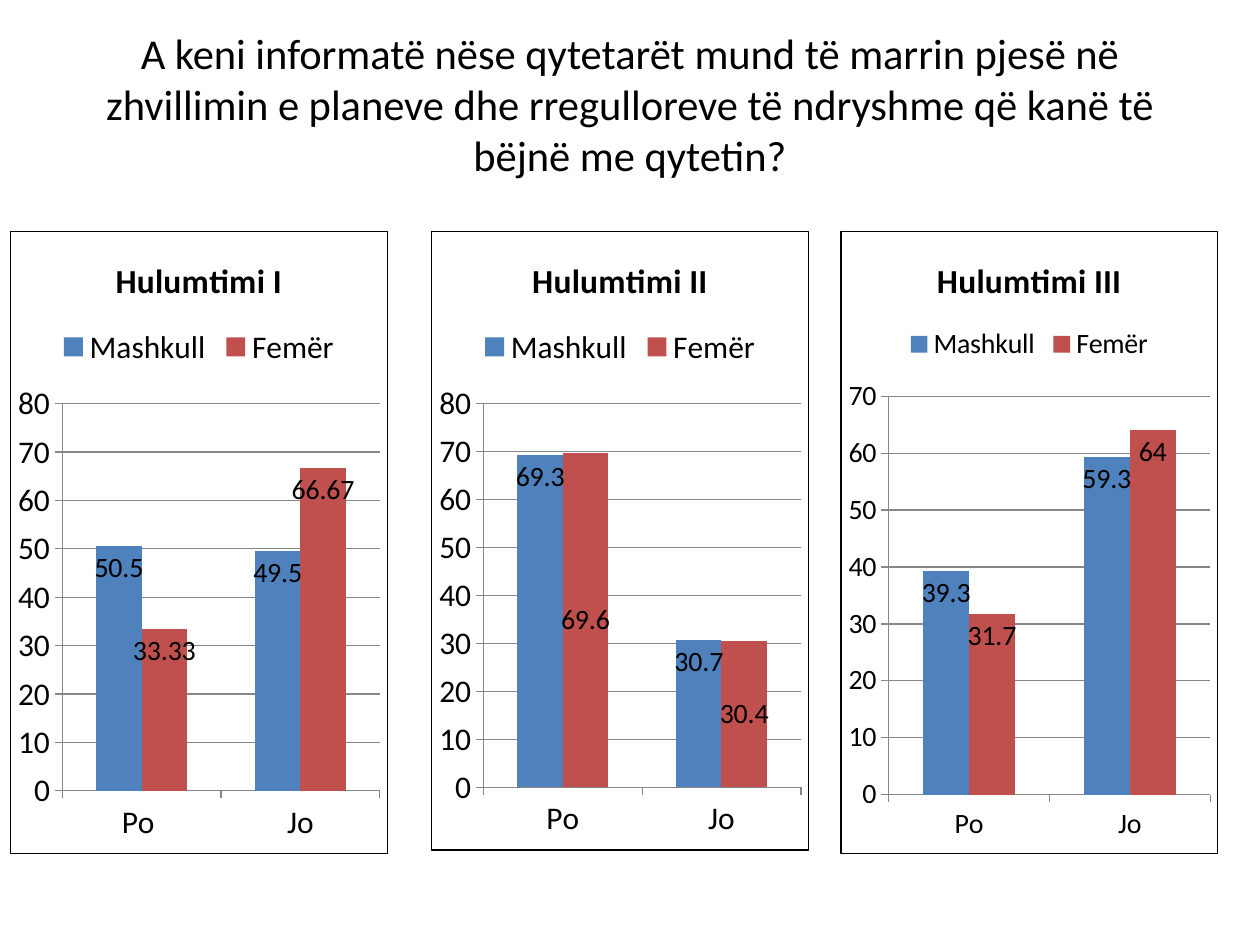
"""Build a slide comparing three surveys of men and women with column charts."""
import pptx
import pptx.chart.data
import pptx.dml.color
import pptx.enum.chart
import pptx.enum.text
import pptx.oxml
import pptx.oxml.ns
import pptx.util

Cm, Pt = pptx.util.Cm, pptx.util.Pt
Position = pptx.enum.chart.XL_LABEL_POSITION
FONT = "Calibri"
COLORS = {
    "text": "000000",
    "border": "000000",
    "axis": "878787",
    "Mashkull": "4F81BD",
    "Femër": "C0504D",
}
QUESTION = (
    "A keni informatë nëse qytetarët mund të marrin pjesë në zhvillimin e planeve "
    "dhe rregulloreve të ndryshme që kanë të bëjnë me qytetin?"
)
CHART_TOP, CHART_WIDTH = Cm(4.65), Cm(7.62)
INSIDE, CENTER = Position.INSIDE_END, Position.CENTER
SURVEYS = [
    dict(title="Hulumtimi I", left=0.2, height=12.57, size=18, top_value=80,
         answers=("Po ", "Jo"), men=(50.5, 49.5), women=(33.33, 66.67), women_label=INSIDE),
    dict(title="Hulumtimi II", left=8.69, height=12.5, size=18, top_value=80,
         answers=("Po", "Jo"), men=(69.3, 30.7), women=(69.6, 30.4), women_label=CENTER),
    dict(title="Hulumtimi III", left=16.94, height=12.57, size=16, top_value=70,
         answers=("Po", "Jo"), men=(39.3, 59.3), women=(31.7, 64), women_label=INSIDE),
]


def rgb(name):
    """Return the named colour."""
    return pptx.dml.color.RGBColor.from_string(COLORS[name])


def style_font(font, size, bold=False):
    """Set the face, size, weight and colour of a font."""
    font.name, font.size, font.bold = FONT, Pt(size), bold
    font.color.rgb = rgb("text")


def style_line(line):
    """Give an axis or gridline its thin grey stroke."""
    line.color.rgb = rgb("axis")
    line.width = Pt(0.75)


def add_question(slide):
    """Add the survey question across the top."""
    question = slide.shapes.add_textbox(Cm(1.27), Cm(0.43), Cm(22.86), Cm(3.94))
    frame = question.text_frame
    frame.word_wrap = True
    frame.vertical_anchor = pptx.enum.text.MSO_ANCHOR.TOP
    frame.text = QUESTION
    paragraph = frame.paragraphs[0]
    paragraph.alignment = pptx.enum.text.PP_ALIGN.CENTER
    style_font(paragraph.runs[0].font, 24.3)


def add_border(chart):
    """Outline the whole chart area."""
    border = pptx.oxml.parse_xml(
        f'<c:spPr {pptx.oxml.ns.nsdecls("c", "a")}><a:noFill/><a:ln w="{Pt(0.75)}">'
        f'<a:solidFill><a:srgbClr val="{COLORS["border"]}"/></a:solidFill></a:ln></c:spPr>'
    )
    chart.element.find(pptx.oxml.ns.qn("c:chart")).addnext(border)


def style_axes(chart, top_value):
    """Set the scale, ticks and lines of both axes."""
    for axis in (chart.category_axis, chart.value_axis):
        axis.major_tick_mark = pptx.enum.chart.XL_TICK_MARK.OUTSIDE
        axis.minor_tick_mark = pptx.enum.chart.XL_TICK_MARK.NONE
        style_line(axis.format.line)
    values = chart.value_axis
    values.minimum_scale, values.maximum_scale, values.major_unit = 0, top_value, 10
    values.has_major_gridlines = True
    style_line(values.major_gridlines.format.line)


def style_series(series, label_position):
    """Colour one series and show its values."""
    series.format.fill.solid()
    series.format.fill.fore_color.rgb = rgb(series.name)
    labels = series.data_labels
    labels.show_value = True
    labels.position = label_position
    style_font(labels.font, 16)


def add_survey(slide, survey):
    """Add the column chart of one survey."""
    data = pptx.chart.data.CategoryChartData()
    data.categories = survey["answers"]
    data.add_series("Mashkull", survey["men"])
    data.add_series("Femër", survey["women"])
    chart = slide.shapes.add_chart(
        pptx.enum.chart.XL_CHART_TYPE.COLUMN_CLUSTERED,
        Cm(survey["left"]), CHART_TOP, CHART_WIDTH, Cm(survey["height"]), data,
    ).chart
    style_font(chart.font, survey["size"])
    chart.has_title = True
    title = chart.chart_title
    title.include_in_layout = False
    title.text_frame.text = survey["title"]
    style_font(title.text_frame.paragraphs[0].runs[0].font, 19.2, bold=True)
    chart.has_legend = True
    chart.legend.position = pptx.enum.chart.XL_LEGEND_POSITION.TOP
    chart.legend.include_in_layout = False
    style_axes(chart, survey["top_value"])
    plot = chart.plots[0]
    plot.gap_width, plot.overlap, plot.vary_by_categories = 150, 0, False
    for series, position in zip(plot.series, (INSIDE, survey["women_label"])):
        style_series(series, position)
    add_border(chart)


def main():
    """Build and save the slide."""
    deck = pptx.Presentation()
    deck.slide_width, deck.slide_height = Cm(25.4), Cm(19.05)
    slide = deck.slides.add_slide(deck.slide_layouts[6])
    add_question(slide)
    for survey in SURVEYS:
        add_survey(slide, survey)
    deck.save("out.pptx")


if __name__ == "__main__":
    main()
